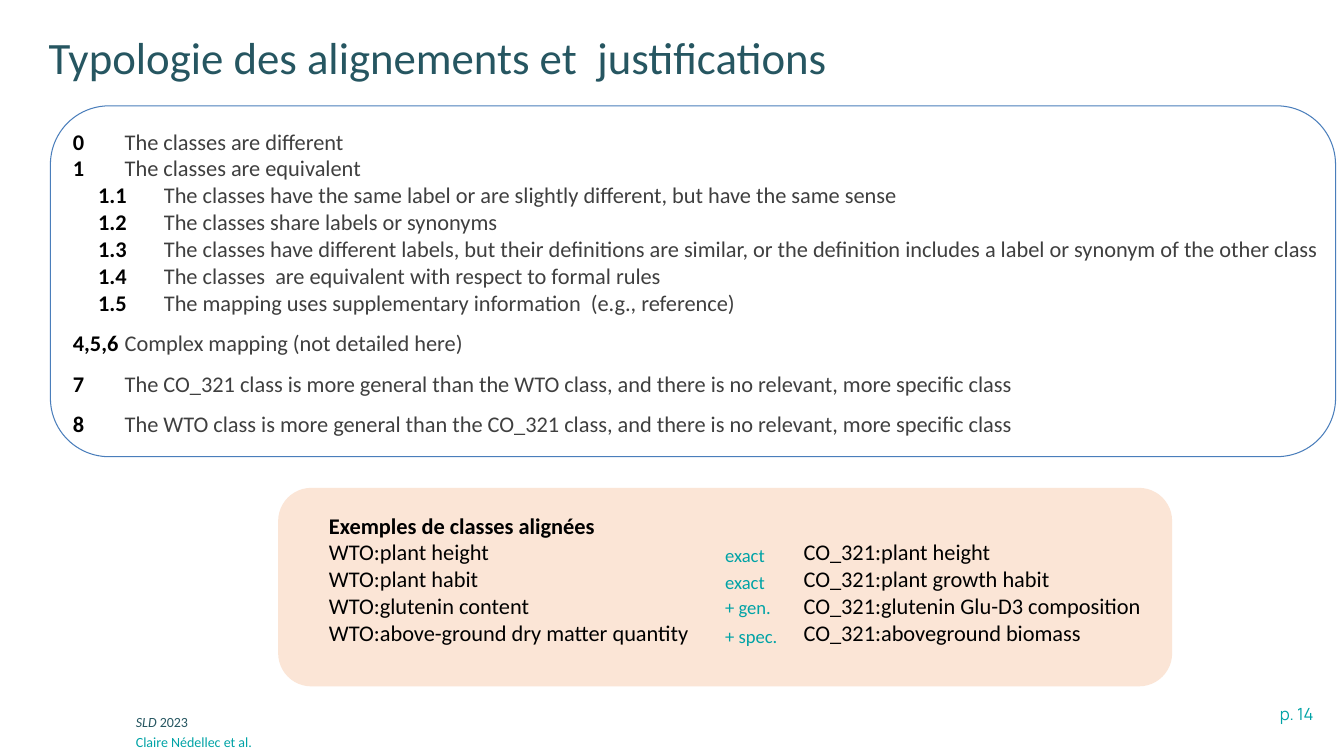
from lxml import etree
from pptx import Presentation
from pptx import util as u
from pptx.dml.color import RGBColor
from pptx.enum import shapes, text
from pptx.oxml import ns

Pt = u.Pt
FONT = "Calibri"
BLACK = RGBColor(0x00, 0x00, 0x00)
GREY = RGBColor(0x3F, 0x3F, 0x3F)
PETROL = RGBColor(0x26, 0x56, 0x61)
TEAL = RGBColor(0x00, 0xA3, 0xA6)
BLUE = RGBColor(0x4A, 0x7E, 0xBB)
PEACH = RGBColor(0xFB, 0xE5, 0xD6)

CODE_TABS = [37]
SUBCODE_TABS = [18, 65]
EXAMPLE_TABS = [339]
GROUP_GAP = 9.76

TYPOLOGY = [
    ("0", "The classes are different", 0),
    ("1", "The classes are equivalent", 0),
    ("1.1", "The classes have the same label or are slightly different, but have the same sense", 0),
    ("1.2", "The classes share labels or synonyms", 0),
    ("1.3", "The classes have different labels, but their definitions are similar, "
            "or the definition includes a label or synonym of the other class", 0),
    ("1.4", "The classes  are equivalent with respect to formal rules", 0),
    ("1.5", "The mapping uses supplementary information  (e.g., reference)", 0),
    ("4,5,6", "Complex mapping (not detailed here)", GROUP_GAP),
    ("7", "The CO_321 class is more general than the WTO class, "
          "and there is no relevant, more specific class", GROUP_GAP),
    ("8", "The WTO class is more general than the CO_321 class, "
          "and there is no relevant, more specific class", GROUP_GAP),
]

EXAMPLES = [
    ("WTO:plant height", "CO_321:plant height"),
    ("WTO:plant habit", "CO_321:plant growth habit"),
    ("WTO:glutenin content", "CO_321:glutenin Glu-D3 composition"),
    ("WTO:above-ground dry matter quantity", "CO_321:aboveground biomass"),
]

RELATIONS = [("exact", 383.8), ("exact", 403.2), ("+ gen.", 420.5), ("+ spec.", 441.4)]


def add_panel(slide, left, top, width, height, fill=None, line=None):
    shape = slide.shapes.add_shape(
        shapes.MSO_SHAPE.ROUNDED_RECTANGLE, Pt(left), Pt(top), Pt(width), Pt(height))
    shape.shadow.inherit = False
    shape.adjustments[0] = 0.167
    if fill is None:
        shape.fill.background()
    else:
        shape.fill.solid()
        shape.fill.fore_color.rgb = fill
    if line is None:
        shape.line.fill.background()
    else:
        shape.line.color.rgb = line
        shape.line.width = Pt(0.75)


def add_text_frame(slide, left, top, width, height, inset_x=9.6, inset_y=4.8):
    frame = slide.shapes.add_textbox(Pt(left), Pt(top), Pt(width), Pt(height)).text_frame
    frame.word_wrap = True
    frame.margin_left = frame.margin_right = Pt(inset_x)
    frame.margin_top = frame.margin_bottom = Pt(inset_y)
    return frame


def next_paragraph(frame):
    first = frame.paragraphs[0]
    return frame.add_paragraph() if first.runs else first


def set_tabs(paragraph, positions):
    properties = paragraph._p.get_or_add_pPr()
    tab_list = etree.SubElement(properties, ns.qn("a:tabLst"))
    for position in positions:
        etree.SubElement(tab_list, ns.qn("a:tab"), pos=str(Pt(position)), algn="l")


def set_font(paragraph, size, color=None, name=FONT):
    paragraph.font.name = name
    paragraph.font.size = Pt(size)
    if color is not None:
        paragraph.font.color.rgb = color


def add_run(paragraph, content):
    run = paragraph.add_run()
    run.text = content
    return run


def add_label(slide, content, left, top, width, height, size, color, **insets):
    frame = add_text_frame(slide, left, top, width, height, **insets)
    paragraph = frame.paragraphs[0]
    add_run(paragraph, content)
    set_font(paragraph, size, color)
    return paragraph


def add_typology(slide):
    add_panel(slide, 36, 75.6, 918, 250.6, line=BLUE)
    frame = add_text_frame(slide, 42.5, 86.4, 958, 262)
    for code, meaning, gap in TYPOLOGY:
        paragraph = next_paragraph(frame)
        nested = "." in code
        set_tabs(paragraph, SUBCODE_TABS if nested else CODE_TABS)
        set_font(paragraph, 16)
        if gap:
            paragraph.space_before = Pt(gap)
        code_run = add_run(paragraph, "\t" + code if nested else code)
        code_run.font.bold = True
        code_run.font.color.rgb = BLACK
        add_run(paragraph, "\t" + meaning).font.color.rgb = GREY


def add_examples(slide):
    add_panel(slide, 198.7, 348.5, 638.6, 141.8, fill=PEACH)
    frame = add_text_frame(slide, 225.4, 360.7, 638.6, 106.6)
    heading = frame.paragraphs[0]
    add_run(heading, "Exemples de classes alignées")
    set_font(heading, 16, BLACK)
    heading.font.bold = True
    for pair in EXAMPLES:
        paragraph = next_paragraph(frame)
        set_tabs(paragraph, EXAMPLE_TABS)
        set_font(paragraph, 16, BLACK)
        add_run(paragraph, "\t".join(pair))
    for relation, top in RELATIONS:
        add_label(slide, relation, 508.3, top, 60, 26, 13.3, TEAL)


def add_footer(slide):
    insets = {"inset_x": 7.2, "inset_y": 3.6}
    page = add_label(slide, "p. 14", 781.2, 499, 164.2, 21.6, 12, TEAL, **insets)
    page.font.name = "Manrope"
    page.alignment = text.PP_ALIGN.RIGHT
    event = add_label(slide, "SLD", 90, 506.2, 528.5, 19.4, 10, PETROL, **insets)
    event.runs[0].font.italic = True
    add_run(event, " 2023")
    add_label(slide, "Claire Nédellec et al.", 90, 520.6, 528.5, 19.4, 10, TEAL, **insets)


def main():
    presentation = Presentation()
    presentation.slide_width = Pt(960)
    presentation.slide_height = Pt(540)
    slide = presentation.slides.add_slide(presentation.slide_layouts[6])
    add_footer(slide)
    add_label(slide, "Typologie des alignements et  justifications",
              25.2, 16.6, 593.3, 48.2, 32, PETROL)
    add_typology(slide)
    add_examples(slide)
    presentation.save("out.pptx")


if __name__ == "__main__":
    main()
